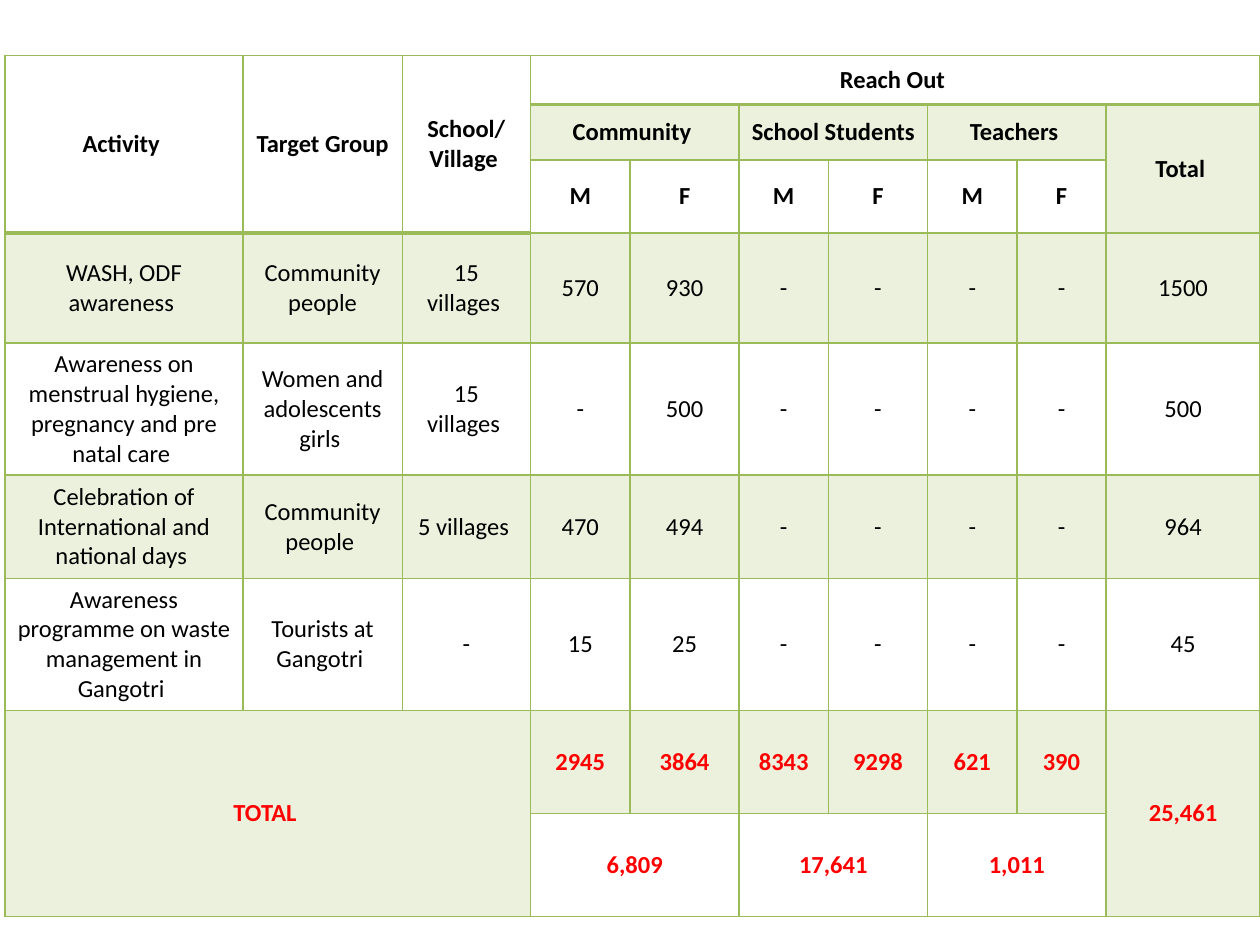
from lxml import etree
from pptx import Presentation
from pptx.dml.color import RGBColor
from pptx.enum import text
from pptx.oxml import ns
from pptx.util import Pt

GREEN = RGBColor(0x9B, 0xBB, 0x59)
BLACK = RGBColor(0, 0, 0)
RED = RGBColor(0xFF, 0, 0)
TINT_ALPHA = 20000

COLUMN_WIDTHS = [136, 91, 73.25, 57, 62.25, 51, 56.75, 51, 51, 88]
ROW_HEIGHTS = [28.25, 31.5, 41.75, 63, 59, 59, 59, 59, 59]
LABEL_COLUMNS = 3
TOTAL_COLUMN = 9
FIRST_BODY_ROW = 3
FIRST_TOTAL_ROW = 7

ROWS = [
    ["Activity ", "Target Group ", "School/\nVillage ", "Reach Out "] + [""] * 6,
    ["", "", "", "Community ", "", "School Students ", "", "Teachers ", "", "Total "],
    ["", "", ""] + ["M", "F"] * 3 + [""],
    ["WASH, ODF awareness ", "Community people", "15 villages ",
     "570", "930", "-", "-", "-", "-", "1500"],
    ["Awareness on menstrual hygiene, pregnancy and pre natal care ",
     "Women and adolescents girls ", "15 villages ",
     "-", "500", "-", "-", "-", "-", "500"],
    ["Celebration of International and national days ", "Community people ",
     "5 villages ", "470", "494", "-", "-", "-", "-", "964"],
    ["Awareness programme on waste management in Gangotri ",
     "Tourists at Gangotri ", "-", "15", "25", "-", "-", "-", "-", "45"],
    ["TOTAL ", "", "", "2945", "3864", "8343", "9298", "621", "390", "25,461"],
    ["", "", "", "6,809", "", "17,641", "", "1,011", "", ""],
]


def merge_cells(table):
    """Join the header, pair and total cells."""
    spans = [(0, column, 2, column) for column in range(LABEL_COLUMNS)]
    spans += [(row, column, row, column + 1) for row in (1, 8) for column in (3, 5, 7)]
    spans += [(0, 3, 0, 9), (1, 9, 2, 9), (7, 0, 8, 2), (7, 9, 8, 9)]
    for top, left, bottom, right in spans:
        table.cell(top, left).merge(table.cell(bottom, right))


def set_borders(cell, row, column):
    """Draw green cell edges, heavier below the header blocks."""
    header_end = 2 if column < LABEL_COLUMNS else 0
    widths = {
        "lnL": 1,
        "lnR": 1,
        "lnT": 2 if row == header_end + 1 else 1,
        "lnB": 2 if row <= header_end else 1,
    }
    properties = cell._tc.get_or_add_tcPr()
    for edge, width in widths.items():
        line = etree.SubElement(properties, ns.qn(f"a:{edge}"), w=str(Pt(width)))
        fill = etree.SubElement(line, ns.qn("a:solidFill"))
        etree.SubElement(fill, ns.qn("a:srgbClr"), val=str(GREEN))


def set_fill(cell, row, column):
    """Tint every second row and the tall total cells."""
    tall_total = row in (2, 8) and column == TOTAL_COLUMN
    tall_label = row == 8 and column < LABEL_COLUMNS
    plain_label = row < FIRST_BODY_ROW and column < LABEL_COLUMNS
    if (row % 2 and not plain_label) or tall_total or tall_label:
        cell.fill.solid()
        cell.fill.fore_color.rgb = GREEN
        color = cell._tc.tcPr.find(ns.qn("a:solidFill")).find(ns.qn("a:srgbClr"))
        etree.SubElement(color, ns.qn("a:alpha"), val=str(TINT_ALPHA))
    else:
        cell.fill.background()


def write_cell(cell, words, row):
    """Write centred words in the style of their row."""
    cell.text = words
    cell.vertical_anchor = text.MSO_ANCHOR.MIDDLE
    for paragraph in cell.text_frame.paragraphs:
        paragraph.alignment = text.PP_ALIGN.CENTER
        paragraph.font.name = "Calibri"
        paragraph.font.size = Pt(14)
        paragraph.font.bold = row < FIRST_BODY_ROW or row >= FIRST_TOTAL_ROW
        paragraph.font.color.rgb = RED if row >= FIRST_TOTAL_ROW else BLACK


def add_reach_table(slide, left, top):
    """Place the outreach table with its corner at the given point."""
    frame = slide.shapes.add_table(
        len(ROWS), len(COLUMN_WIDTHS), Pt(left), Pt(top),
        Pt(sum(COLUMN_WIDTHS)), Pt(sum(ROW_HEIGHTS)))
    table = frame.table
    table.first_row = False
    table.horz_banding = False
    for column, width in zip(table.columns, COLUMN_WIDTHS):
        column.width = Pt(width)
    for row, height in zip(table.rows, ROW_HEIGHTS):
        row.height = Pt(height)
    merge_cells(table)
    for row, entries in enumerate(ROWS):
        for column, words in enumerate(entries):
            cell = table.cell(row, column)
            write_cell(cell, words, row)
            set_borders(cell, row, column)
            set_fill(cell, row, column)


def main():
    """Build and save the slide."""
    presentation = Presentation()
    presentation.slide_width = Pt(720)
    presentation.slide_height = Pt(540)
    slide = presentation.slides.add_slide(presentation.slide_layouts[6])
    add_reach_table(slide, 2.9, 31.7)
    presentation.save("out.pptx")


if __name__ == "__main__":
    main()
